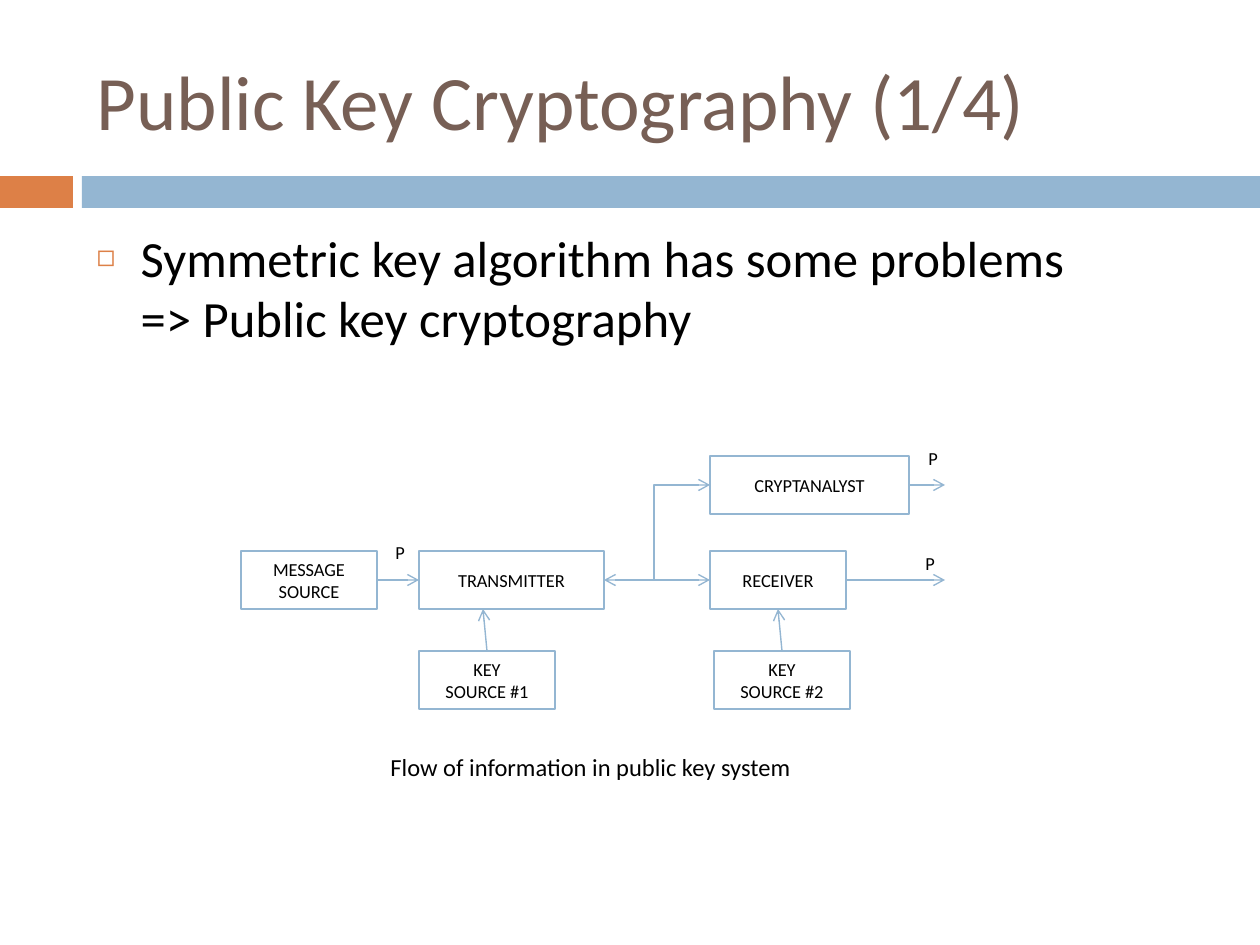
"""Build the public key cryptography slide with its flow diagram."""
import pptx
import pptx.dml.color
import pptx.enum.shapes
import pptx.enum.text
import pptx.oxml.ns
import pptx.util
from lxml import etree

THEME = {
    "font": "Calibri", "title": "775F55", "text": "000000",
    "blue": "94B6D2", "orange": "DD8047",
    "title_pt": 44, "body_pt": 29, "box_pt": 10.5, "caption_pt": 14,
    "border_pt": 0.75, "arrow_pt": 0.79,
}

TITLE = ["Public Key Cryptography (1/4)"]
PROBLEM = ["Symmetric key algorithm has some problems\v=> Public key cryptography"]
CAPTION = ["Flow of information in public key system"]

BANDS = [("orange", (0, 176, 73, 32)), ("blue", (82, 176, 1178, 32))]
BOX_H, BOX_W = 58, 136
FLOW_TOP, KEY_TOP, ANALYST_TOP = 551, 651, 456
BOXES = {
    "transmitter": (["TRANSMITTER"], 419, FLOW_TOP, 185),
    "message": (["MESSAGE", "SOURCE"], 241, FLOW_TOP, BOX_W),
    "key 1": (["KEY", "SOURCE #1"], 419, KEY_TOP, BOX_W),
    "receiver": (["RECEIVER"], 710, FLOW_TOP, BOX_W),
    "cryptanalyst": (["CRYPTANALYST"], 710, ANALYST_TOP, 199),
    "key 2": (["KEY", "SOURCE #2"], 714, KEY_TOP, BOX_W),
}
PLAINTEXTS = [(383, 535), (916, 441), (913, 546)]
OUTPUT_X, TAP_X, KEY_SLANT = 945, 654, 4

STRAIGHT = pptx.enum.shapes.MSO_CONNECTOR.STRAIGHT
ELBOW = pptx.enum.shapes.MSO_CONNECTOR.ELBOW
RECTANGLE = pptx.enum.shapes.MSO_SHAPE.RECTANGLE
LEFT, CENTER = pptx.enum.text.PP_ALIGN.LEFT, pptx.enum.text.PP_ALIGN.CENTER
TOP, MIDDLE = pptx.enum.text.MSO_ANCHOR.TOP, pptx.enum.text.MSO_ANCHOR.MIDDLE


def px(*lengths):
    return [pptx.util.Emu(round(length * 914400 / 126)) for length in lengths]


def color(name):
    return pptx.dml.color.RGBColor.from_string(THEME[name])


def add_xml(parent, tag, **attributes):
    return etree.SubElement(parent, pptx.oxml.ns.qn(tag), attributes)


def write(shape, lines, size, ink="text", align=LEFT, anchor=TOP):
    frame = shape.text_frame
    frame.word_wrap = True
    frame.auto_size = pptx.enum.text.MSO_AUTO_SIZE.NONE
    frame.vertical_anchor = anchor
    for index, line in enumerate(lines):
        paragraph = frame.paragraphs[0] if index == 0 else frame.add_paragraph()
        paragraph.alignment = align
        for part_index, part in enumerate(line.split("\v")):
            if part_index:
                paragraph.add_line_break()
            run = paragraph.add_run()
            run.text = part
            run.font.name = THEME["font"]
            run.font.size = pptx.util.Pt(THEME[size])
            run.font.color.rgb = color(ink)


def place(shape, *frame):
    shape.left, shape.top, shape.width, shape.height = px(*frame)


def add_rectangle(slide, frame):
    rectangle = slide.shapes.add_shape(RECTANGLE, *px(*frame))
    rectangle.shadow.inherit = False
    return rectangle


def add_band(slide, fill, frame):
    band = add_rectangle(slide, frame)
    band.fill.solid()
    band.fill.fore_color.rgb = color(fill)
    band.line.fill.background()


def add_box(slide, lines, left, top, width):
    box = add_rectangle(slide, (left, top, width, BOX_H))
    box.fill.background()
    box.line.color.rgb = color("blue")
    box.line.width = pptx.util.Pt(THEME["border_pt"])
    write(box, lines, "box_pt", align=CENTER, anchor=MIDDLE)


def add_label(slide, lines, size, frame):
    write(slide.shapes.add_textbox(*px(*frame)), lines, size)


def add_arrow(slide, start, end, both_ends=False, kind=STRAIGHT):
    arrow = slide.shapes.add_connector(kind, *px(*start, *end))
    arrow.line.color.rgb = color("blue")
    arrow.line.width = pptx.util.Pt(THEME["arrow_pt"])
    line = arrow.line._get_or_add_ln()
    for tag in ["a:headEnd", "a:tailEnd"] if both_ends else ["a:tailEnd"]:
        add_xml(line, tag, type="arrow")
    add_xml(arrow._element.spPr, "a:effectLst")
    return arrow


def add_corner_arrow(slide, start, end):
    """Turn a one-bend connector so it rises first and then runs right."""
    mid_x, mid_y = (start[0] + end[0]) / 2, (start[1] + end[1]) / 2
    half_run, half_rise = (end[0] - start[0]) / 2, (start[1] - end[1]) / 2
    corner = add_arrow(slide, (mid_x + half_rise, mid_y + half_run),
                       (mid_x - half_rise, mid_y - half_run), kind=ELBOW)
    properties = corner._element.spPr
    properties.find(pptx.oxml.ns.qn("a:xfrm")).set("rot", "5400000")
    properties.find(pptx.oxml.ns.qn("a:prstGeom")).set("prst", "bentConnector2")


def add_problem(body):
    place(body, 84, 220, 1124, 620)
    write(body, PROBLEM, "body_pt")
    paragraph = body.text_frame.paragraphs[0]
    paragraph.space_before = pptx.util.Pt(7)
    properties = paragraph._p.get_or_add_pPr()
    indent = px(44)[0]
    properties.set("marL", str(indent))
    properties.set("indent", str(-indent))
    bullet_color = add_xml(properties, "a:buClr")
    add_xml(bullet_color, "a:srgbClr", val=THEME["orange"])
    add_xml(properties, "a:buSzPct", val="60000")
    add_xml(properties, "a:buChar", char="◻")


def add_flow(slide):
    for box in BOXES.values():
        add_box(slide, *box)
    left = {name: box[1] for name, box in BOXES.items()}
    right = {name: box[1] + box[3] for name, box in BOXES.items()}
    flow_y, analyst_y = FLOW_TOP + BOX_H / 2, ANALYST_TOP + BOX_H / 2
    add_arrow(slide, (right["message"], flow_y), (left["transmitter"], flow_y))
    add_arrow(slide, (right["receiver"], flow_y), (OUTPUT_X, flow_y))
    add_arrow(slide, (right["cryptanalyst"], analyst_y), (OUTPUT_X, analyst_y))
    add_arrow(slide, (right["transmitter"], flow_y), (left["receiver"], flow_y), True)
    add_corner_arrow(slide, (TAP_X, flow_y), (left["cryptanalyst"], analyst_y))
    for key in ["key 1", "key 2"]:
        key_x = left[key] + BOX_W / 2
        add_arrow(slide, (key_x, KEY_TOP), (key_x - KEY_SLANT, FLOW_TOP + BOX_H))
    for spot in PLAINTEXTS:
        add_label(slide, ["P"], "box_pt", (*spot, 32, 25))


def main():
    deck = pptx.Presentation()
    deck.slide_width, deck.slide_height = px(1260, 945)
    slide = deck.slides.add_slide(deck.slide_layouts[1])
    for fill, frame in BANDS:
        add_band(slide, fill, frame)
    title = slide.shapes.title
    place(title, 84, 32, 1124, 136)
    write(title, TITLE, "title_pt", "title", anchor=MIDDLE)
    add_problem(slide.placeholders[1])
    add_flow(slide)
    add_label(slide, CAPTION, "caption_pt", (378, 746, 546, 43))
    deck.save("out.pptx")


if __name__ == "__main__":
    main()
